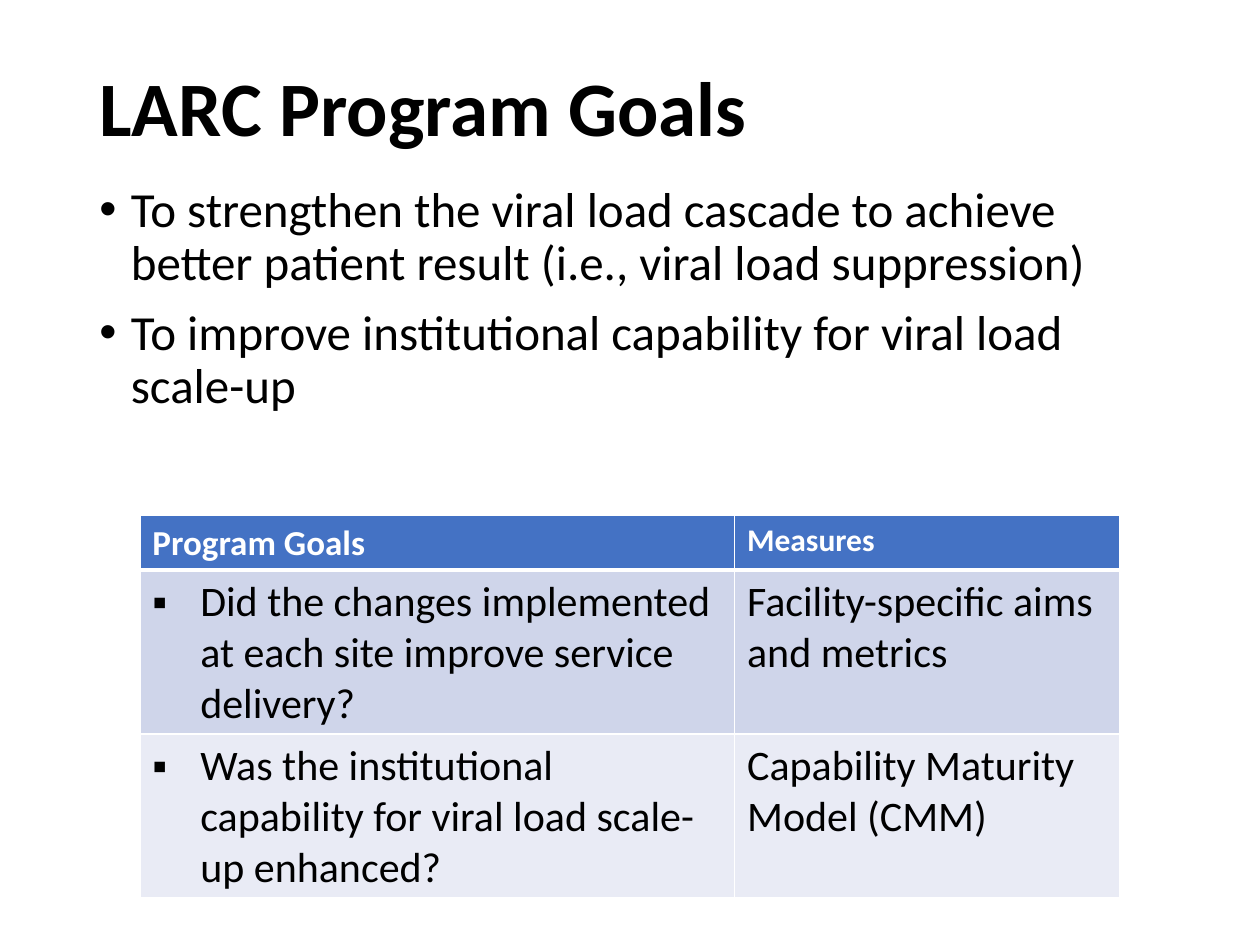
from lxml import etree
from pptx import Presentation
from pptx import util as u
from pptx.dml import color
from pptx.enum import text
from pptx.oxml import ns

COLORS = {"ink": "000000", "paper": "FFFFFF", "header": "4472C4",
          "odd": "CFD5EA", "even": "E9EBF5"}
TITLE = {"size": u.Pt(44), "bold": True}
GOAL = {"size": u.Pt(28), "bold": False}
HEADINGS = [{"size": u.Pt(20), "bold": True}, {"size": u.Pt(18), "bold": True}]
BODY = {"size": u.Pt(24), "bold": False}
SPACED = {"line_spacing": 0.9, "space_before": u.Pt(10)}
GOALS = [
    "To strengthen the viral load cascade to achieve better patient result (i.e., viral load suppression)",
    "To improve institutional capability for viral load scale-up",
]
MEASURES = [
    ("Program Goals", "Measures"),
    ("Did the changes implemented at each site improve service delivery?",
     "Facility-specific aims and metrics"),
    ("Was the institutional capability for viral load scale-up enhanced?",
     "Capability Maturity Model (CMM)"),
]


def apply(target, values):
    """Set every attribute in values on target."""
    for name, value in values.items():
        setattr(target, name, value)


def write(paragraph, words, font, ink="ink", spacing=None):
    """Put one formatted run into a paragraph."""
    run = paragraph.add_run()
    run.text = words
    apply(run.font, {"name": "Calibri", **font})
    run.font.color.rgb = color.RGBColor.from_string(COLORS[ink])
    apply(paragraph, spacing or {})


def add_bullet(paragraph, mark, indent):
    """Give a paragraph a hanging bullet."""
    props = paragraph._p.get_or_add_pPr()
    props.set("marL", str(indent))
    props.set("indent", str(-indent))
    etree.SubElement(props, ns.qn("a:buFont"), typeface="Arial")
    etree.SubElement(props, ns.qn("a:buChar"), char=mark)


def add_border(cell, side, width):
    """Draw one white edge of a table cell."""
    props = cell._tc.get_or_add_tcPr()
    edge = etree.SubElement(props, ns.qn(f"a:{side}"), w=str(width))
    fill = etree.SubElement(edge, ns.qn("a:solidFill"))
    etree.SubElement(fill, ns.qn("a:srgbClr"), val=COLORS["paper"])


def add_frame(slide, box, anchor):
    """Add a wrapping text box and return its frame."""
    frame = slide.shapes.add_textbox(*box).text_frame
    apply(frame, {"word_wrap": True, "vertical_anchor": anchor})
    return frame


def add_title(slide, box):
    """Place the slide title."""
    frame = add_frame(slide, box, text.MSO_ANCHOR.MIDDLE)
    write(frame.paragraphs[0], "LARC Program Goals", TITLE, spacing={"line_spacing": 0.9})


def add_goals(slide, box):
    """Place the bulleted goals."""
    frame = add_frame(slide, box, text.MSO_ANCHOR.TOP)
    for index, goal in enumerate(GOALS):
        paragraph = frame.add_paragraph() if index else frame.paragraphs[0]
        write(paragraph, goal, GOAL, spacing=SPACED)
        add_bullet(paragraph, "•", u.Inches(0.25))


def add_measures(slide, box):
    """Place the table of goals and their measures."""
    left, top, width, height = box
    table = slide.shapes.add_table(len(MEASURES), 2, *box).table
    table.columns[0].width = u.Inches(4.72)
    table.columns[1].width = width - u.Inches(4.72)
    header_height = u.Inches(0.43)
    for row, words in enumerate(MEASURES):
        is_header = row == 0
        table.rows[row].height = header_height if is_header else (height - header_height) // 2
        band = "header" if is_header else "odd" if row % 2 else "even"
        for column, entry in enumerate(words):
            cell = table.cell(row, column)
            paragraph = cell.text_frame.paragraphs[0]
            write(paragraph, entry, HEADINGS[column] if is_header else BODY,
                  "paper" if is_header else "ink")
            if not is_header and column == 0:
                add_bullet(paragraph, "▪", u.Inches(0.38))
            for side in ("lnL", "lnR", "lnT", "lnB"):
                heavy = (row, side) in ((0, "lnB"), (1, "lnT"))
                add_border(cell, side, u.Pt(3 if heavy else 1))
            cell.fill.solid()
            cell.fill.fore_color.rgb = color.RGBColor.from_string(COLORS[band])


def main():
    """Build and save the slide."""
    deck = Presentation()
    apply(deck, {"slide_width": u.Inches(10), "slide_height": u.Inches(7.5)})
    slide = deck.slides.add_slide(deck.slide_layouts[6])
    regions = [
        (add_title, (0.69, 0.33, 8.62, 1.11)),
        (add_goals, (0.69, 1.42, 8.62, 2.59)),
        (add_measures, (1.11, 4.09, 7.78, 3.03)),
    ]
    for place, box in regions:
        place(slide, [u.Inches(length) for length in box])
    deck.save("out.pptx")


if __name__ == "__main__":
    main()
